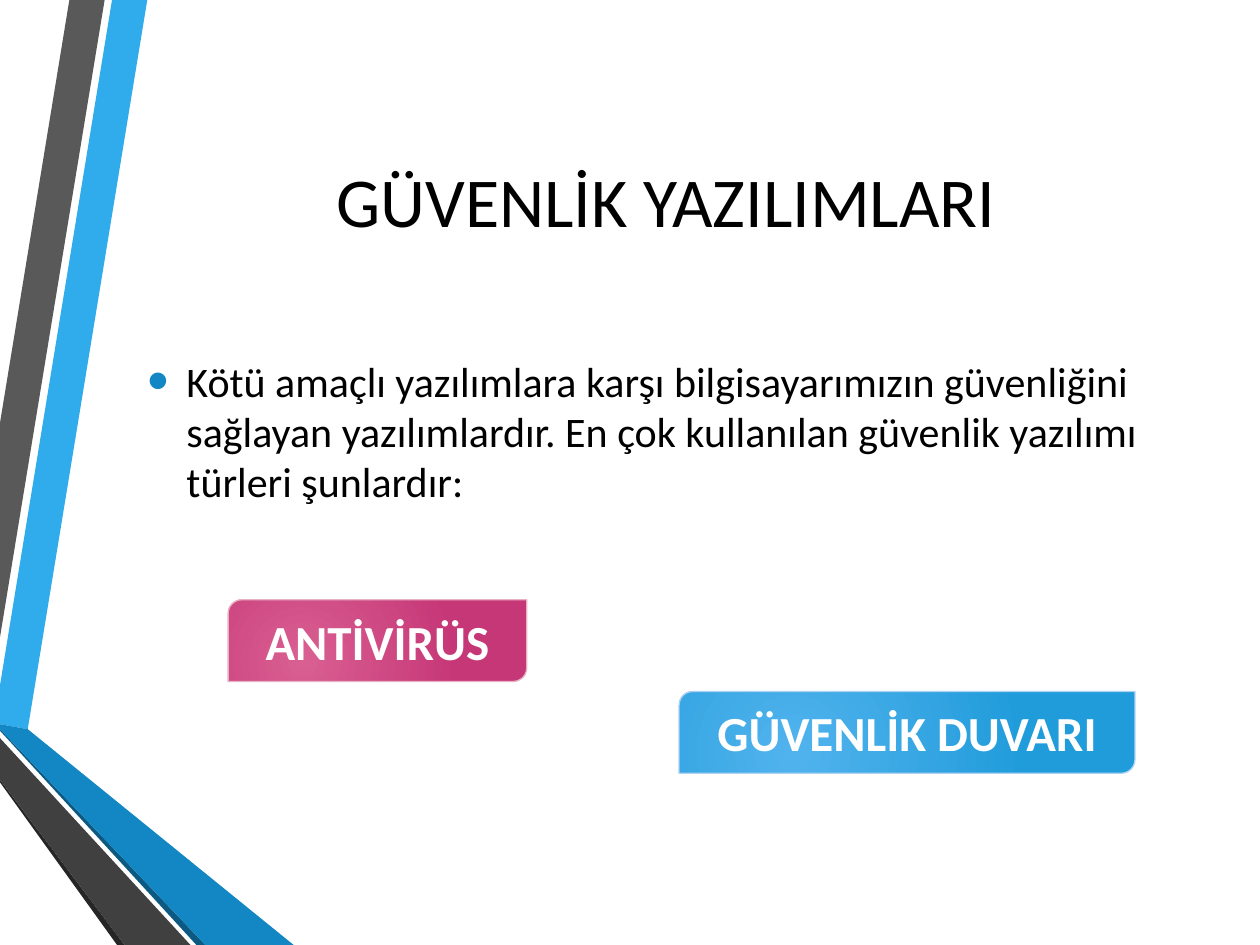
from dataclasses import dataclass

import pptx
import pptx.dml.color
import pptx.enum.shapes
import pptx.enum.text
import pptx.oxml
import pptx.oxml.ns
import pptx.util
from pptx.util import Cm

COLORS = {
    "text": "000000", "light_text": "FFFFFF", "bullet": "1287C3",
    "sky": "30ACEC", "blue": "1287C3", "navy": "0C5A82",
    "gray": "595959", "charcoal": "404040", "black": "262626",
    "pink_light": "D95F92", "pink": "C63777", "pink_line": "E8B1C3",
    "azure_light": "51B3ED", "azure": "219CDB", "azure_line": "AED2F4",
}
WIDTH, HEIGHT = 25.4, 19.05
FONT = "Calibri"
CENTER = pptx.enum.text.PP_ALIGN.CENTER
LEFT = pptx.enum.text.PP_ALIGN.LEFT


@dataclass(frozen=True)
class Band:
    color: str
    points: tuple[tuple[float, float], ...]


@dataclass(frozen=True)
class Label:
    text: str
    left: float
    top: float
    width: float
    hue: str


# Ribbons along the left edge, from back to front, in centimetres
BANDS = (
    Band("sky", ((0, 13.82), (0, 14.6), (0.56, 14.7), (2.97, 0), (2.26, 0))),
    Band("gray", ((2.11, 0), (1.4, 0), (0, 8.53), (0, 12.85))),
    Band("black", ((0, 15.72), (0, 15.77), (2.36, HEIGHT), (2.51, HEIGHT))),
    Band("navy", ((0, 14.7), (0, 14.73), (3.96, HEIGHT), (4.14, HEIGHT))),
    Band("blue", ((0, 14.7), (4.14, HEIGHT), (5.92, HEIGHT), (0.56, 14.7), (0, 14.6))),
    Band("charcoal", ((0, 15.72), (2.51, HEIGHT), (3.84, HEIGHT), (0, 14.88))),
)
LABELS = (
    Label("ANTİVİRÜS", 4.6, 12.09, 6.02, "pink"),
    Label("GÜVENLİK DUVARI", 13.69, 13.94, 9.19, "azure"),
)
LABEL_HEIGHT = 1.65


def rgb(name: str) -> pptx.dml.color.RGBColor:
    return pptx.dml.color.RGBColor.from_string(COLORS[name])


def add_xml(parent, tag: str, **attributes):
    child = pptx.oxml.parse_xml(f"<a:{tag} {pptx.oxml.ns.nsdecls('a')}/>")
    for key, value in attributes.items():
        child.set(key, str(value))
    parent.append(child)
    return child


def write(shape, text: str, *, size: float, color: str = "text",
          bold: bool = False, align=CENTER):
    frame = shape.text_frame
    frame.word_wrap = True
    frame.auto_size = pptx.enum.text.MSO_AUTO_SIZE.NONE
    frame.vertical_anchor = pptx.enum.text.MSO_ANCHOR.MIDDLE
    paragraph = frame.paragraphs[0]
    paragraph.alignment = align
    run = paragraph.add_run()
    run.text = text
    run.font.name = FONT
    run.font.size = pptx.util.Pt(size)
    run.font.bold = bold
    run.font.color.rgb = rgb(color)
    return paragraph


def add_bullet(paragraph) -> None:
    paragraph.space_before = pptx.util.Pt(4.8)
    paragraph.space_after = pptx.util.Pt(6)
    properties = paragraph._p.get_or_add_pPr()
    properties.set("marL", str(Cm(0.79)))
    properties.set("indent", str(-Cm(0.79)))
    bullet_color = add_xml(properties, "buClr")
    add_xml(bullet_color, "srgbClr", val=COLORS["bullet"])
    add_xml(properties, "buSzPct", val=145000)
    add_xml(properties, "buFont", typeface="Arial")
    add_xml(properties, "buChar", char="•")


def draw_band(slide, band: Band) -> None:
    start, *rest = [(Cm(x), Cm(y)) for x, y in band.points]
    builder = slide.shapes.build_freeform(*start)
    builder.add_line_segments(rest, close=True)
    ribbon = builder.convert_to_shape()
    ribbon.shadow.inherit = False
    ribbon.fill.solid()
    ribbon.fill.fore_color.rgb = rgb(band.color)
    ribbon.line.fill.background()


def draw_label(slide, label: Label) -> None:
    box = slide.shapes.add_shape(
        pptx.enum.shapes.MSO_SHAPE.ROUND_2_DIAG_RECTANGLE,
        Cm(label.left), Cm(label.top), Cm(label.width), Cm(LABEL_HEIGHT))
    box.shadow.inherit = False
    box.fill.gradient()
    for stop, name in zip(box.fill.gradient_stops, (f"{label.hue}_light", label.hue)):
        stop.color.rgb = rgb(name)
    # Turn the linear gradient into a circular one
    gradient = box._element.spPr.find(pptx.oxml.ns.qn("a:gradFill"))
    gradient.remove(gradient.find(pptx.oxml.ns.qn("a:lin")))
    circle = add_xml(gradient, "path", path="circle")
    add_xml(circle, "fillToRect", l=50000, t=100000, r=100000, b=50000)
    box.line.color.rgb = rgb(f"{label.hue}_line")
    box.line.width = pptx.util.Pt(0.75)
    write(box, label.text, size=28, color="light_text", bold=True)


def main() -> None:
    deck = pptx.Presentation()
    deck.slide_width, deck.slide_height = Cm(WIDTH), Cm(HEIGHT)
    slide = deck.slides.add_slide(deck.slide_layouts[5])

    for band in BANDS:
        draw_band(slide, band)

    # Title
    title = slide.shapes.title
    title.left, title.top = Cm(2.72), Cm(1.27)
    title.width, title.height = Cm(21.41), Cm(5.51)
    write(title, "GÜVENLİK YAZILIMLARI", size=40)

    # Definition
    definition = slide.shapes.add_textbox(Cm(2.72), Cm(6.17), Cm(21.41), Cm(5.03))
    add_bullet(write(
        definition,
        "Kötü amaçlı yazılımlara karşı bilgisayarımızın güvenliğini sağlayan "
        "yazılımlardır. En çok kullanılan güvenlik yazılımı türleri şunlardır:",
        size=24, align=LEFT))

    # Kinds of security software
    for label in LABELS:
        draw_label(slide, label)

    deck.save("out.pptx")


if __name__ == "__main__":
    main()
